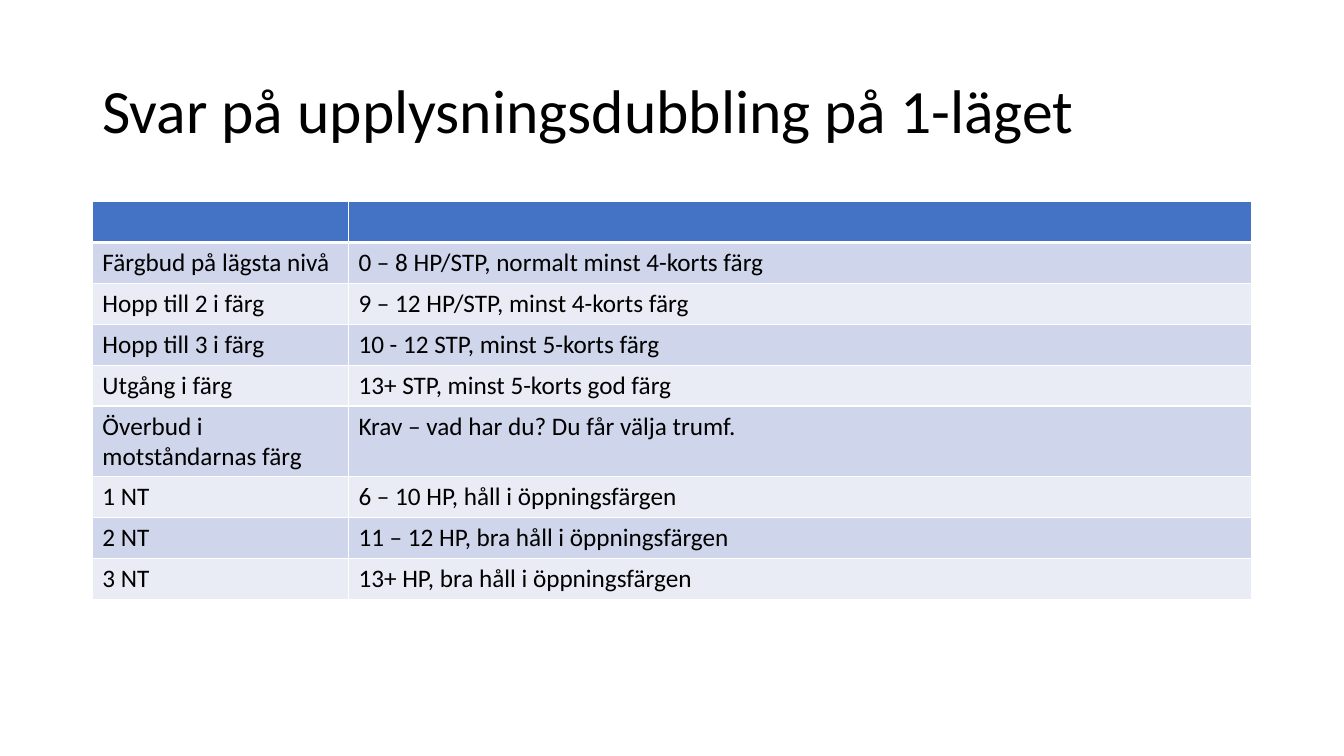
from lxml.etree import SubElement as Sub
from pptx import Presentation
from pptx.dml.color import RGBColor as Rgb
from pptx.enum.text import MSO_ANCHOR as Anchor
from pptx.oxml.ns import qn
from pptx.util import Pt

HEAD = "4472C4"
BANDS = ("CFD5EA", "E9EBF5")
WIDTHS = (182.9, 645.1)
ROW = 29.2
ROWS = (
    ("", ""),
    ("Färgbud på lägsta nivå", "0 – 8 HP/STP, normalt minst 4-korts färg"),
    ("Hopp till 2 i färg", "9 – 12 HP/STP, minst 4-korts färg"),
    ("Hopp till 3 i färg", "10 - 12 STP, minst 5-korts färg"),
    ("Utgång i färg", "13+ STP, minst 5-korts god färg"),
    ("Överbud i motståndarnas färg", "Krav – vad har du? Du får välja trumf."),
    ("1 NT", "6 – 10 HP, håll i öppningsfärgen"),
    ("2 NT", "11 – 12 HP, bra håll i öppningsfärgen"),
    ("3 NT", "13+ HP, bra håll i öppningsfärgen"),
)


def color(code):
    return Rgb.from_string(code)


def write(frame, text, size=18, ink="000000", space=1.0):
    frame.word_wrap = True
    para = frame.paragraphs[0]
    para.line_spacing = space
    para.font.size = Pt(size)
    if text:
        run = para.add_run()
        run.text = text
        run.font.name = "Calibri"
        run.font.size = Pt(size)
        run.font.color.rgb = color(ink)


def edge(cell, side, width, ink="FFFFFF"):
    props = cell._tc.get_or_add_tcPr()
    line = Sub(props, qn(f"a:ln{side}"), w=str(Pt(width)))
    fill = Sub(line, qn("a:solidFill"))
    Sub(fill, qn("a:srgbClr"), val=ink)


def paint(cell, row):
    for side in "LRTB":
        thick = (row, side) in ((0, "B"), (1, "T"))
        edge(cell, side, 3 if thick else 1)
    cell.fill.solid()
    cell.fill.fore_color.rgb = color(BANDS[(row - 1) % 2] if row else HEAD)


def add_title(slide, text):
    box = slide.shapes.add_textbox(Pt(66), Pt(28.8), Pt(828), Pt(104.4))
    box.text_frame.vertical_anchor = Anchor.MIDDLE
    write(box.text_frame, text, size=44, space=0.9)


def add_grid(slide, rows):
    frame = slide.shapes.add_table(
        len(rows), len(WIDTHS), Pt(66), Pt(144), Pt(sum(WIDTHS)), Pt(ROW * len(rows))
    )
    table = frame.table
    for col, width in zip(table.columns, WIDTHS):
        col.width = Pt(width)
    for r, texts in enumerate(rows):
        table.rows[r].height = Pt(ROW)
        for c, text in enumerate(texts):
            cell = table.cell(r, c)
            paint(cell, r)
            write(cell.text_frame, text)
    frame.height = Pt(283.7)


def main():
    deck = Presentation()
    deck.slide_width, deck.slide_height = Pt(960), Pt(540)
    slide = deck.slides.add_slide(deck.slide_layouts[6])
    add_title(slide, "Svar på upplysningsdubbling på 1-läget")
    add_grid(slide, ROWS)
    deck.save("out.pptx")


if __name__ == "__main__":
    main()
